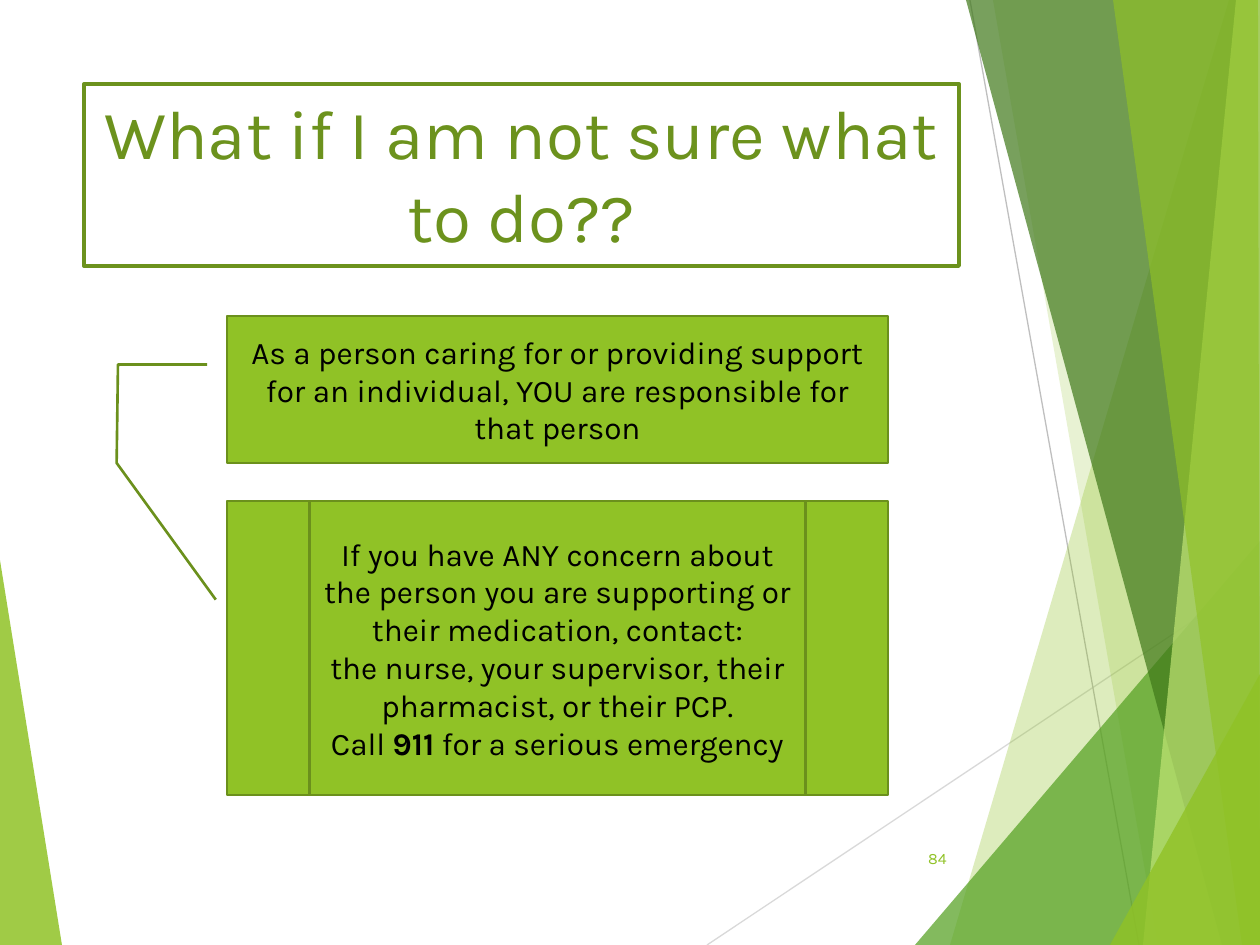
from lxml.etree import SubElement
from pptx import Presentation
from pptx.dml.color import RGBColor
from pptx.enum.shapes import MSO_CONNECTOR, MSO_SHAPE
from pptx.enum.text import MSO_ANCHOR, MSO_AUTO_SIZE, PP_ALIGN
from pptx.oxml.ns import qn
from pptx.util import Pt

SCALE = 914400 / 126
WIDTH, HEIGHT = 1260, 945
FONT = "Karla"
GREEN, TITLE_GREEN, BORDER_GREEN, BLACK = "90C226", "6C921D", "6B901C", "000000"

LEFT_WEDGE = (GREEN, 85, [(0, 560), (62, HEIGHT), (0, HEIGHT)])
RAYS = [
    ("D9D9D9", (707, 945), (1260, 576)),
    ("BFBFBF", (970, 0), (1139, 945)),
]
RIGHT_FACETS = [
    (GREEN, 30, [(1229, 0), (950, HEIGHT), (WIDTH, HEIGHT), (WIDTH, 0)]),
    (GREEN, 20, [(993, 0), (1158, HEIGHT), (WIDTH, HEIGHT), (WIDTH, 0)]),
    ("54A021", 72, [(915, HEIGHT), (WIDTH, 541), (WIDTH, HEIGHT)]),
    ("3F7819", 70, [(966, 0), (1222, HEIGHT), (WIDTH, HEIGHT), (WIDTH, 0)]),
    ("C0E474", 70, [(1236, 0), (1143, HEIGHT), (WIDTH, HEIGHT), (WIDTH, 0)]),
    (GREEN, 65, [(1113, 0), (1242, HEIGHT), (WIDTH, HEIGHT), (1258, 0)]),
    (GREEN, 80, [(1110, HEIGHT), (WIDTH, 674), (WIDTH, HEIGHT)]),
]

TITLE = [["What if I am not sure what to do??"]]
TITLE_BOX = (84, 84, 875, 182)
PAGE_NUMBER = [["84"]]
PAGE_NUMBER_BOX = (888, 833, 71, 50)
BOXES = [
    (MSO_SHAPE.LINE_CALLOUT_3, (227, 316, 661, 147),
     [0.33, -0.03, 0.33, -0.165, 1, -0.167, 1.93, -0.017],
     [["As a person caring for or providing support for an individual, "
       "YOU are responsible for that person"]]),
    (MSO_SHAPE.FLOWCHART_PREDEFINED_PROCESS, (227, 501, 661, 294), [],
     [["If you have ANY concern about the person you are supporting or "
       "their medication, contact:"],
      ["the nurse, your supervisor, their pharmacist, or their PCP."],
      ["Call ", "911", " for a serious emergency"]]),
]
BOLD_WORDS = {"911"}


def px(value):
    return round(value * SCALE)


def rgb(value):
    return RGBColor.from_string(value)


def place(shape, box):
    for name, value in zip(("left", "top", "width", "height"), box):
        setattr(shape, name, px(value))


def paint(shape, fill=None, line=None, weight=0):
    if fill:
        shape.fill.solid()
        shape.fill.fore_color.rgb = rgb(fill)
    if line:
        shape.line.color.rgb = rgb(line)
        shape.line.width = Pt(weight)
    else:
        shape.line.fill.background()


def write(shape, paragraphs, size, color, align, anchor):
    frame = shape.text_frame
    settings = {"word_wrap": True, "auto_size": MSO_AUTO_SIZE.NONE, "vertical_anchor": anchor}
    for name, value in settings.items():
        setattr(frame, name, value)
    for index, runs in enumerate(paragraphs):
        paragraph = frame.add_paragraph() if index else frame.paragraphs[0]
        paragraph.alignment = align
        for text in runs:
            run = paragraph.add_run()
            run.text = text
            font = {"name": FONT, "size": Pt(size), "bold": text in BOLD_WORDS}
            for name, value in font.items():
                setattr(run.font, name, value)
            run.font.color.rgb = rgb(color)


def add_facet(slide, color, opacity, points):
    builder = slide.shapes.build_freeform(*points[0], scale=SCALE)
    builder.add_line_segments(points[1:], close=True)
    shape = builder.convert_to_shape()
    shape.shadow.inherit = False
    paint(shape, color)
    for node in shape.element.spPr.iter(qn("a:srgbClr")):
        SubElement(node, qn("a:alpha"), val=str(opacity * 1000))


def add_ray(slide, color, start, end):
    ray = slide.shapes.add_connector(MSO_CONNECTOR.STRAIGHT, *map(px, start + end))
    paint(ray, line=color, weight=0.75)
    SubElement(ray.element.spPr, qn("a:effectLst"))


def add_box(slide, kind, box, adjustments, paragraphs):
    shape = slide.shapes.add_shape(kind, *map(px, box))
    shape.shadow.inherit = False
    for index, value in enumerate(adjustments):
        shape.adjustments[index] = value
    paint(shape, GREEN, BORDER_GREEN, 1.5)
    write(shape, paragraphs, 18, BLACK, PP_ALIGN.CENTER, MSO_ANCHOR.MIDDLE)


def main():
    """Build the slide on what to do when unsure and save it."""
    presentation = Presentation()
    presentation.slide_width, presentation.slide_height = px(WIDTH), px(HEIGHT)
    slide = presentation.slides.add_slide(presentation.slide_layouts[5])

    add_facet(slide, *LEFT_WEDGE)
    for ray in RAYS:
        add_ray(slide, *ray)
    for facet in RIGHT_FACETS:
        add_facet(slide, *facet)

    title = slide.shapes.title
    place(title, TITLE_BOX)
    paint(title, line=TITLE_GREEN, weight=2.25)
    write(title, TITLE, 39.6, TITLE_GREEN, PP_ALIGN.CENTER, MSO_ANCHOR.TOP)

    number = slide.shapes.add_textbox(*map(px, PAGE_NUMBER_BOX))
    write(number, PAGE_NUMBER, 9, GREEN, PP_ALIGN.RIGHT, MSO_ANCHOR.MIDDLE)
    for box in BOXES:
        add_box(slide, *box)
    presentation.save("out.pptx")


if __name__ == "__main__":
    main()
